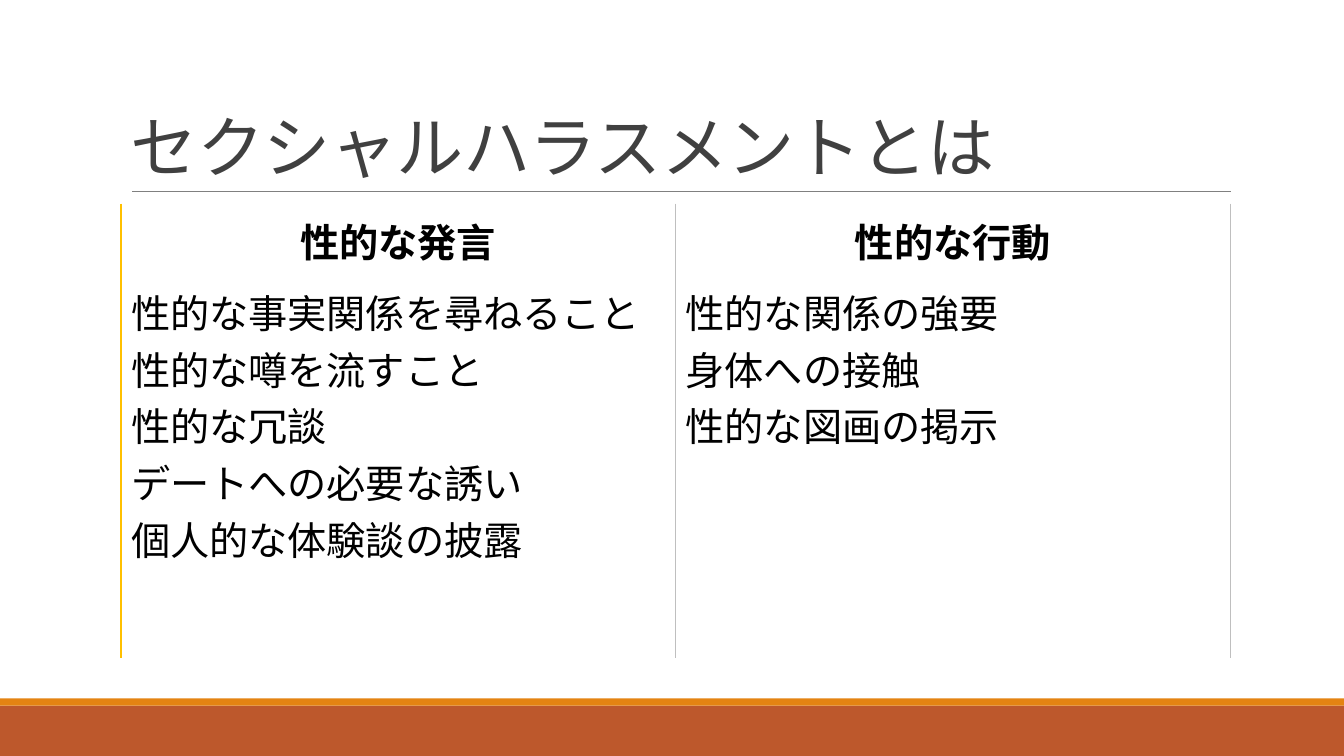
from dataclasses import dataclass

from lxml.etree import SubElement
from pptx import Presentation
from pptx.dml.color import RGBColor
from pptx.enum.shapes import MSO_CONNECTOR, MSO_SHAPE
from pptx.enum.text import MSO_ANCHOR, PP_ALIGN
from pptx.oxml.ns import qn
from pptx.slide import Slide
from pptx.table import _Cell
from pptx.util import Inches, Pt


@dataclass(frozen=True)
class Theme:
    font: str = "Calibri"
    title_size: int = 48
    body_size: int = 28
    title: str = "404040"
    body: str = "000000"
    rule: str = "808080"
    accent: str = "FFC000"
    divider: str = "BFBFBF"
    footer: str = "BD582C"
    footer_edge: str = "E48312"


@dataclass(frozen=True)
class Band:
    top: float
    height: float
    color: str


@dataclass(frozen=True)
class Topic:
    heading: str
    examples: tuple[str, ...]


@dataclass(frozen=True)
class Border:
    color: str
    width: float


THEME = Theme()
SLIDE_WIDTH, SLIDE_HEIGHT = 13.33, 7.5
LEFT, WIDTH = 1.2, 11
TITLE = "セクシャルハラスメントとは"
BANDS = (Band(7, 0.5, THEME.footer), Band(6.93, 0.07, THEME.footer_edge))
TOPICS = (
    Topic("性的な発言", (
        "性的な事実関係を尋ねること",
        "性的な噂を流すこと",
        "性的な冗談",
        "デートへの必要な誘い",
        "個人的な体験談の披露",
    )),
    Topic("性的な行動", (
        "性的な関係の強要",
        "身体への接触",
        "性的な図画の掲示",
    )),
)
ROW_HEIGHTS = (0.74, 3.77)
ACCENT_BORDER = Border(THEME.accent, 1)
DIVIDER_BORDER = Border(THEME.divider, 0.5)


def add_band(slide: Slide, band: Band) -> None:
    strip = slide.shapes.add_shape(
        MSO_SHAPE.RECTANGLE, 0, Inches(band.top), Inches(SLIDE_WIDTH), Inches(band.height)
    )
    strip.shadow.inherit = False
    strip.fill.solid()
    strip.fill.fore_color.rgb = RGBColor.from_string(band.color)
    strip.line.fill.background()


def add_title_rule(slide: Slide) -> None:
    rule = slide.shapes.add_connector(
        MSO_CONNECTOR.STRAIGHT, Inches(1.31), Inches(1.9), Inches(12.21), Inches(1.9)
    )
    rule.line.color.rgb = RGBColor.from_string(THEME.rule)
    rule.line.width = Pt(0.5)
    SubElement(rule._element.spPr, qn("a:effectLst"))


def add_title(slide: Slide) -> None:
    frame = slide.shapes.add_textbox(
        Inches(LEFT), Inches(0.31), Inches(WIDTH), Inches(1.59)
    ).text_frame
    frame.word_wrap = True
    frame.vertical_anchor = MSO_ANCHOR.BOTTOM
    heading = frame.paragraphs[0]
    heading.line_spacing = 0.85
    run = heading.add_run()
    run.text = TITLE
    run.font.name = THEME.font
    run.font.size = Pt(THEME.title_size)
    run.font.color.rgb = RGBColor.from_string(THEME.title)
    run.font._element.set("spc", "-50")


def set_borders(cell: _Cell, left: Border, right: Border) -> None:
    """Draw the side borders and clear those above and below."""
    properties = cell._tc.get_or_add_tcPr()
    for side, border in (("L", left), ("R", right), ("T", None), ("B", None)):
        edge = SubElement(properties, qn(f"a:ln{side}"))
        if border is None:
            SubElement(edge, qn("a:noFill"))
        else:
            edge.set("w", str(Pt(border.width)))
            fill = SubElement(edge, qn("a:solidFill"))
            SubElement(fill, qn("a:srgbClr"), val=border.color)


def fill_cell(cell: _Cell, lines: tuple[str, ...], is_heading: bool) -> None:
    cell.fill.background()
    cell.vertical_anchor = MSO_ANCHOR.MIDDLE if is_heading else MSO_ANCHOR.TOP
    cell.text_frame.text = "\n".join(lines)
    for paragraph in cell.text_frame.paragraphs:
        paragraph.alignment = PP_ALIGN.CENTER if is_heading else PP_ALIGN.LEFT
        paragraph.font.name = THEME.font
        paragraph.font.size = Pt(THEME.body_size)
        paragraph.font.bold = is_heading
        paragraph.font.color.rgb = RGBColor.from_string(THEME.body)


def add_topics(slide: Slide) -> None:
    table = slide.shapes.add_table(
        len(ROW_HEIGHTS), len(TOPICS),
        Inches(LEFT), Inches(2.02), Inches(WIDTH), Inches(sum(ROW_HEIGHTS)),
    ).table
    table.first_row = table.horz_banding = False
    for row, height in zip(table.rows, ROW_HEIGHTS):
        row.height = Inches(height)
    for column, topic in enumerate(TOPICS):
        left = ACCENT_BORDER if column == 0 else DIVIDER_BORDER
        for row, lines in enumerate(((topic.heading,), topic.examples)):
            cell = table.cell(row, column)
            set_borders(cell, left, DIVIDER_BORDER)
            fill_cell(cell, lines, is_heading=row == 0)


def main() -> None:
    presentation = Presentation()
    presentation.slide_width = Inches(SLIDE_WIDTH)
    presentation.slide_height = Inches(SLIDE_HEIGHT)
    slide = presentation.slides.add_slide(presentation.slide_layouts[6])
    for band in BANDS:
        add_band(slide, band)
    add_title_rule(slide)
    add_title(slide)
    add_topics(slide)
    presentation.save("out.pptx")


if __name__ == "__main__":
    main()
